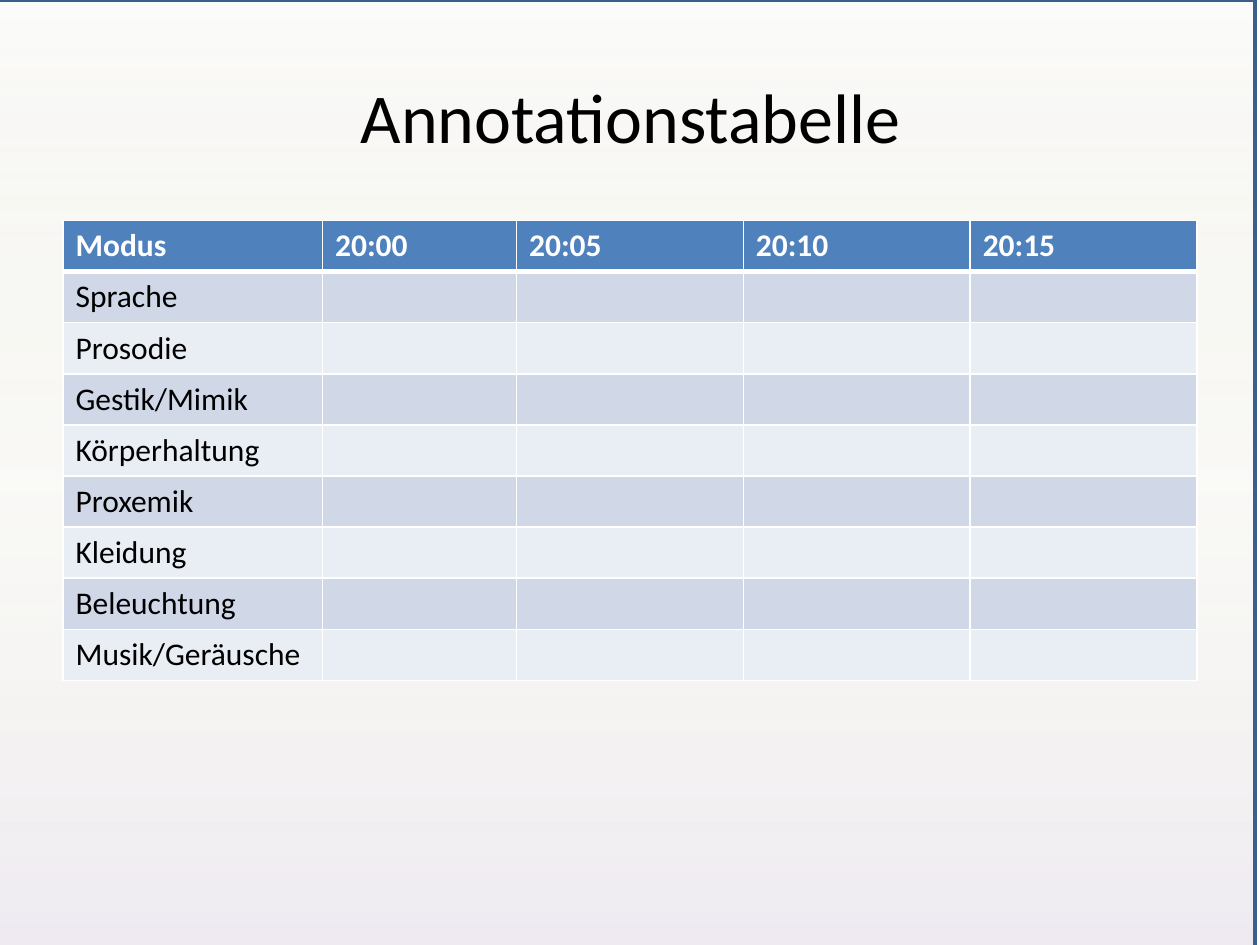
from lxml import etree
from pptx import Presentation
from pptx.dml.color import RGBColor
from pptx.enum.shapes import MSO_SHAPE
from pptx.enum.text import MSO_ANCHOR, PP_ALIGN
from pptx.oxml.ns import qn
from pptx.util import Inches, Pt

RECTANGLE = MSO_SHAPE.RECTANGLE
MIDDLE = MSO_ANCHOR.MIDDLE
CENTER = PP_ALIGN.CENTER

TIMES = ["20:00", "20:05", "20:10", "20:15"]
MODES = ["Sprache", "Prosodie", "Gestik/Mimik", "Körperhaltung", "Proxemik",
         "Kleidung", "Beleuchtung", "Musik/Geräusche"]
COLUMN_WIDTHS = [2.06, 1.54, 1.8, 1.8, 1.8]
HEADER_FILL = "4F81BD"
BAND_FILLS = ["D0D8E8", "E9EDF4"]
# position in percent, colour, opacity in percent
GRADIENT_STOPS = [(0, "F2F2F2", 30), (50, "C4BD97", 7), (100, "B3A2C7", 22)]


def color(hex_string):
    return RGBColor.from_string(hex_string)


def add_element(parent, tag, **attributes):
    element = etree.SubElement(parent, qn(tag))
    for name, value in attributes.items():
        element.set(name, str(value))
    return element


presentation = Presentation()
presentation.slide_width = Inches(10)
presentation.slide_height = Inches(7.5)
slide = presentation.slides.add_slide(presentation.slide_layouts[5])

# Background panel with a translucent vertical gradient, behind the title
panel = slide.shapes.add_shape(
    RECTANGLE, Inches(-0.04), Inches(0), Inches(10), Inches(7.69))
panel.shadow.inherit = False
panel.line.color.rgb = color("3A5F8C")
panel.line.width = Pt(2)
panel.fill.gradient()
gradient = panel.element.spPr.find(qn("a:gradFill"))
for child in list(gradient):
    gradient.remove(child)
stop_list = add_element(gradient, "a:gsLst")
for position, hex_string, opacity in GRADIENT_STOPS:
    stop = add_element(stop_list, "a:gs", pos=position * 1000)
    stop_color = add_element(stop, "a:srgbClr", val=hex_string)
    add_element(stop_color, "a:alpha", val=opacity * 1000)
add_element(gradient, "a:lin", ang=90 * 60000, scaled=0)
slide.shapes.title.element.addprevious(panel.element)

# Title
title = slide.shapes.title
title.left, title.top = Inches(1.14), Inches(0.29)
title.width, title.height = Inches(7.73), Inches(1.25)
title.text_frame.text = "Annotationstabelle"
title.text_frame.vertical_anchor = MIDDLE
paragraph = title.text_frame.paragraphs[0]
paragraph.alignment = CENTER
title_format = {"size": Pt(40), "name": "Calibri"}
for name, value in title_format.items():
    setattr(paragraph.font, name, value)
paragraph.font.color.rgb = color("000000")

# Annotation table: one row per mode, one column per time
rows = [["Modus"] + TIMES] + [[mode] + [""] * len(TIMES) for mode in MODES]
table = slide.shapes.add_table(
    len(rows), len(COLUMN_WIDTHS),
    Inches(0.5), Inches(1.75), Inches(9), Inches(3.65)).table
for column, width in zip(table.columns, COLUMN_WIDTHS):
    column.width = Inches(width)

for row_index, row in enumerate(rows):
    is_header = row_index == 0
    fill = HEADER_FILL if is_header else BAND_FILLS[(row_index - 1) % 2]
    cell_format = {"size": Pt(18), "name": "Calibri", "bold": is_header}
    for column_index, text in enumerate(row):
        cell = table.cell(row_index, column_index)
        cell.text = text
        font = cell.text_frame.paragraphs[0].font
        for name, value in cell_format.items():
            setattr(font, name, value)
        font.color.rgb = color("FFFFFF" if is_header else "000000")

        borders = {"a:lnL": 1, "a:lnR": 1,
                   "a:lnT": 3 if row_index == 1 else 1,
                   "a:lnB": 3 if is_header else 1}
        properties = cell._tc.get_or_add_tcPr()
        for tag, points in borders.items():
            border = add_element(properties, tag, w=Pt(points))
            border_fill = add_element(border, "a:solidFill")
            add_element(border_fill, "a:srgbClr", val="FFFFFF")
        cell.fill.solid()
        cell.fill.fore_color.rgb = color(fill)

presentation.save("out.pptx")
